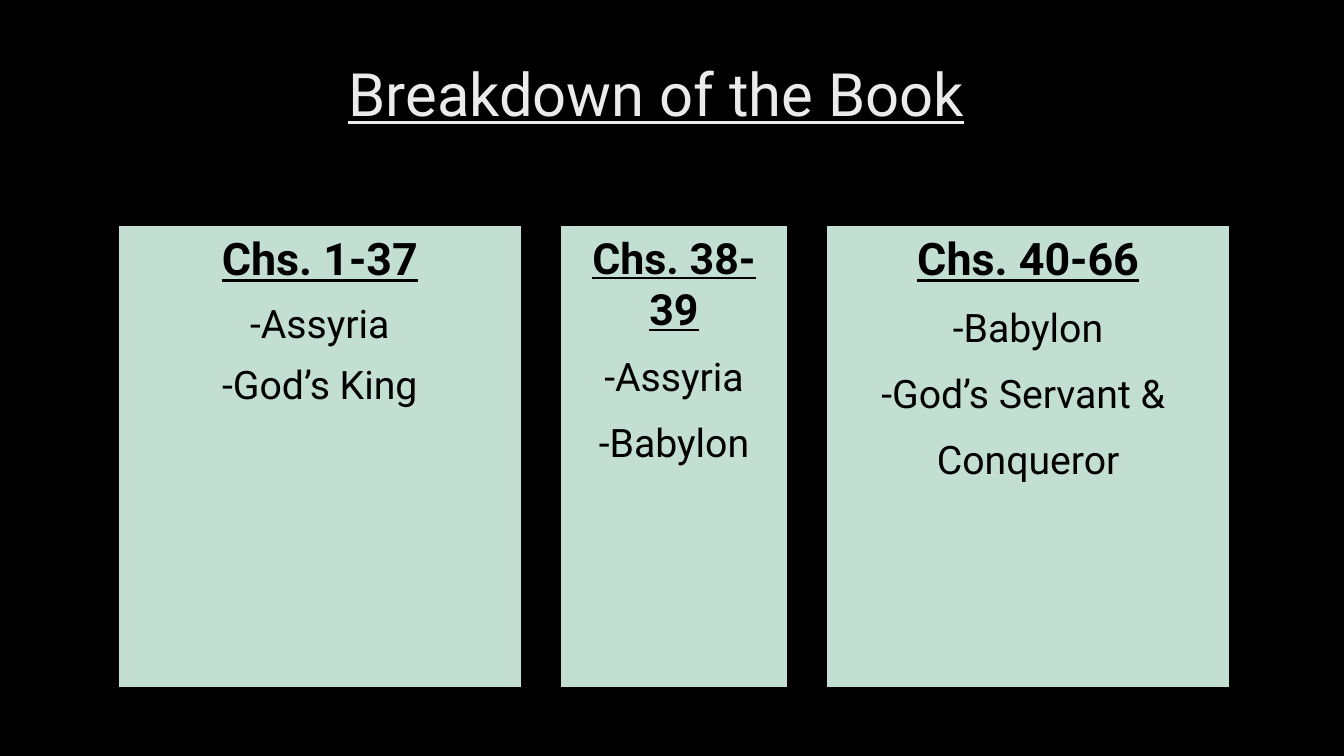
from lxml.etree import SubElement
from pptx import Presentation
from pptx.dml.color import RGBColor
from pptx.enum.shapes import MSO_SHAPE as Preset
from pptx.enum.text import MSO_ANCHOR as Anchor, MSO_AUTO_SIZE as AutoSize, PP_ALIGN as Align
from pptx.oxml.ns import qn
from pptx.util import Inches, Pt

BLACK = RGBColor(0x00, 0x00, 0x00)
MINT = RGBColor(0xC3, 0xDE, 0xD3)
PALE = RGBColor(0xEB, 0xEB, 0xEB)
FONT = "Roboto"

COLUMN_LEFT, COLUMN_TOP, COLUMN_HEIGHT, COLUMN_GAP = 0.88, 1.68, 3.44, 0.29
SECTIONS = [
    (3, 24, 7.5, "Chs. 1-37", ["-Assyria", "-God’s King"]),
    (1.69, 23, 10, "Chs. 38-39", ["-Assyria", "-Babylon"]),
    (3, 24, 10, "Chs. 40-66", ["-Babylon", "-God’s Servant & ", "Conqueror"]),
]


def place(shape, box):
    """Move a shape to a box of left, top, width and height in inches."""
    shape.left, shape.top, shape.width, shape.height = map(Inches, box)


def prepare_frame(shape):
    """Set the shared margins and wrapping, and return the text frame."""
    frame = shape.text_frame
    frame.word_wrap = True
    frame.auto_size = AutoSize.NONE
    frame.vertical_anchor = Anchor.TOP
    frame.margin_left = frame.margin_right = Inches(0.07)
    frame.margin_top = frame.margin_bottom = Inches(0.04)
    return frame


def write_line(paragraph, text, size, color, space=0, bold=False, underline=False):
    """Write one centred line without a bullet."""
    properties = paragraph._p.get_or_add_pPr()
    properties.set("marL", "0")
    properties.set("indent", "0")
    SubElement(properties, qn("a:buNone"))
    paragraph.alignment = Align.CENTER
    paragraph.space_before = Pt(space)
    run = paragraph.add_run()
    run.text = text
    font = run.font
    font.name, font.size = FONT, Pt(size)
    font.bold, font.underline = bold, underline
    font.color.rgb = color


def add_title(title, box):
    """Fill the title placeholder."""
    place(title, box)
    frame = prepare_frame(title)
    write_line(frame.paragraphs[0], "Breakdown of the Book", 32, PALE, underline=True)


def add_section(panel, box, heading_size, space, heading, points):
    """Turn a panel into a column with a heading and its points."""
    place(panel, box)
    panel.fill.solid()
    panel.fill.fore_color.rgb = MINT
    panel.line.color.rgb = BLACK
    panel.line.width = Pt(0.75)
    frame = prepare_frame(panel)
    write_line(frame.paragraphs[0], heading, heading_size, BLACK, bold=True, underline=True)
    for point in points:
        write_line(frame.add_paragraph(), point, 21, BLACK, space)


def build_breakdown(slide):
    """Lay out the title and the row of chapter columns."""
    slide.background.fill.solid()
    slide.background.fill.fore_color.rgb = BLACK
    add_title(slide.shapes.title, (1.03, 0.38, 7.71, 1.15))
    left = COLUMN_LEFT
    for index, (width, *content) in enumerate(SECTIONS):
        box = (left, COLUMN_TOP, width, COLUMN_HEIGHT)
        if index == 0:
            panel = slide.placeholders[1]
        else:
            panel = slide.shapes.add_shape(Preset.RECTANGLE, *map(Inches, box))
            panel.shadow.inherit = False
        add_section(panel, box, *content)
        left += width + COLUMN_GAP


def main():
    """Build and save a 16:9 presentation."""
    deck = Presentation()
    deck.slide_width = Inches(10)
    deck.slide_height = deck.slide_width * 9 // 16
    build_breakdown(deck.slides.add_slide(deck.slide_layouts[1]))
    deck.save("out.pptx")


if __name__ == "__main__":
    main()
